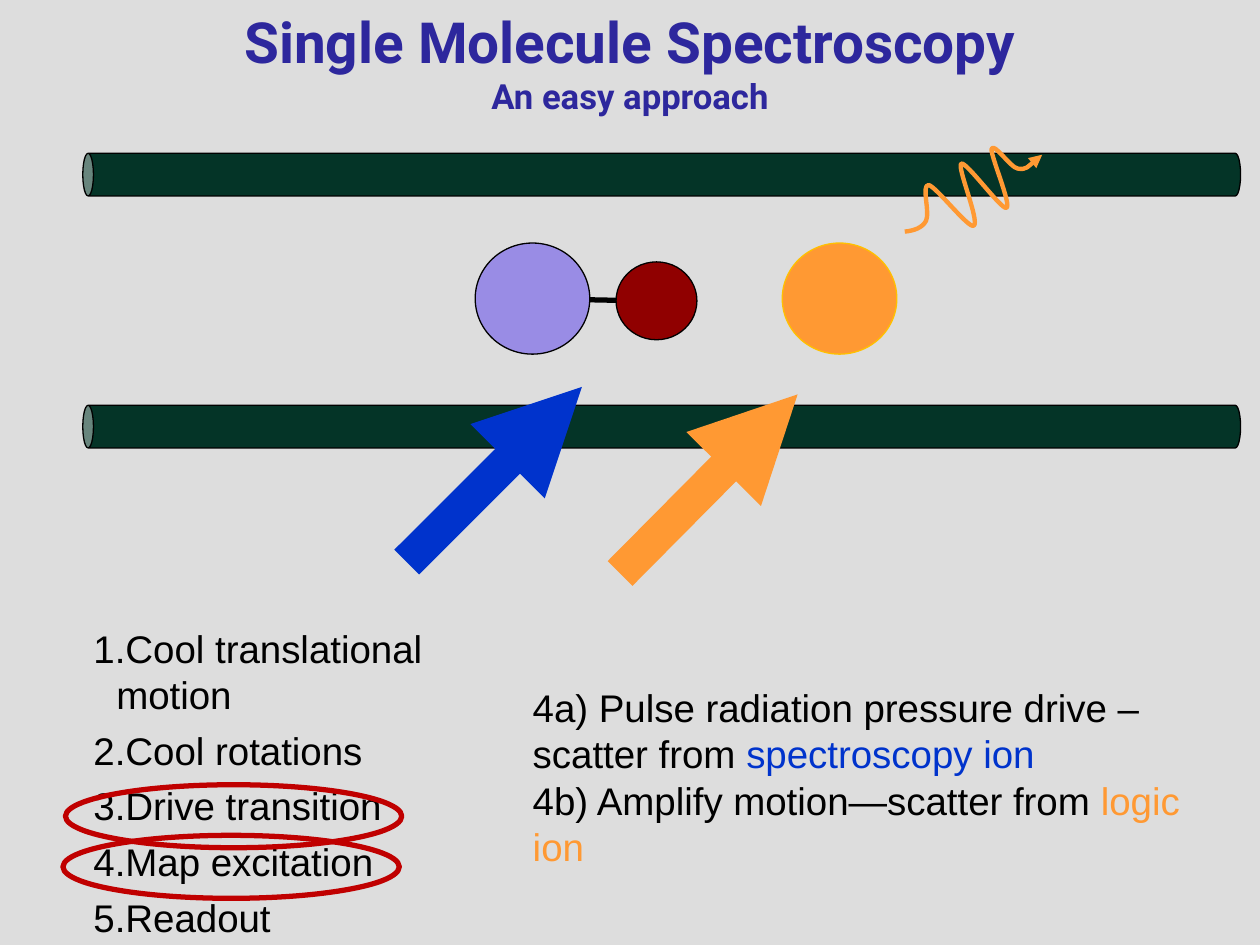
"""Build the single molecule spectroscopy slide."""
from lxml import etree
from pptx import Presentation
from pptx.dml.color import RGBColor
from pptx.enum.shapes import MSO_CONNECTOR, MSO_SHAPE
from pptx.enum.text import MSO_ANCHOR, MSO_AUTO_SIZE, PP_ALIGN
from pptx.oxml.ns import qn
from pptx.util import Cm, Pt

CAN, ELLIPSE = MSO_SHAPE.CAN, MSO_SHAPE.OVAL
STRAIGHT = MSO_CONNECTOR.STRAIGHT
TOP, MIDDLE = MSO_ANCHOR.TOP, MSO_ANCHOR.MIDDLE
NO_RESIZE = MSO_AUTO_SIZE.NONE
CENTER, LEFT = PP_ALIGN.CENTER, PP_ALIGN.LEFT

COLOURS = {
    "background": "DDDDDD", "title": "2D279D", "black": "000000",
    "rod": "043427", "orange": "FF9933", "gold": "FFC000",
    "crimson": "900000", "lilac": "998CE5", "blue": "0033CC", "ring": "C00000",
}

TITLE = [("Single Molecule Spectroscopy", 32.4), ("An easy approach", 19.8)]
STEPS = ["Cool translational motion", "Cool rotations", "Drive transition",
         "Map excitation", "Readout"]
NOTES = [
    [("4a) Pulse radiation pressure drive –scatter from ", "black"),
     ("spectroscopy ion", "blue")],
    [("4b) Amplify motion—scatter from ", "black"), ("logic ion", "orange")],
]
ROD_CENTRE_X, ROD_THICKNESS, ROD_LENGTH = 13.34, 0.86, 23.34
ROD_CENTRES_Y = [3.52, 8.6]
BOND = ((10.74, 6.02), (13.23, 6.07))
ATOMS = [
    ((15.77, 4.9, 2.31, 2.24), "orange", "gold"),
    ((12.42, 5.28, 1.63, 1.57), "crimson", "black"),
    ((9.58, 4.9, 2.31, 2.24), "lilac", "black"),
]
BEAMS = [((12.5, 11.56), (16.08, 7.95), "orange"),
         ((8.2, 11.33), (11.73, 7.8), "blue")]
RINGS = [(1.32, 15.82, 6.78, 1.27), (1.27, 16.84, 6.78, 1.27)]
PHOTON_START = (1824, 467)
PHOTON_CURVE = [
    (1842, 465), (1859, 460), (1867, 445), (1875, 427), (1857, 373), (1872, 373),
    (1887, 376), (1953, 462), (1963, 455), (1976, 447), (1928, 335), (1938, 330),
    (1948, 325), (2019, 424), (2029, 419), (2040, 414), (1996, 312), (1999, 300),
    (2004, 287), (2037, 338), (2052, 340), (2070, 343), (2101, 312), (2101, 312),
]


def colour(name):
    return RGBColor.from_string(COLOURS[name])


def place(shape, box):
    shape.left, shape.top, shape.width, shape.height = map(Cm, box)


def style_line(shape, line_colour, width):
    shape.line.color.rgb = colour(line_colour)
    shape.line.width = Pt(width)


def add_arrowhead(shape):
    etree.SubElement(shape.line._get_or_add_ln(), qn("a:tailEnd"), type="triangle")


def add_shape(slide, kind, box, fill, line_colour, width=0.75):
    shape = slide.shapes.add_shape(kind, *map(Cm, box))
    shape.shadow.inherit = False
    if fill:
        shape.fill.solid()
        shape.fill.fore_color.rgb = colour(fill)
    else:
        shape.fill.background()
    style_line(shape, line_colour, width)
    return shape


def add_line(slide, start, end, line_colour, width):
    connector = slide.shapes.add_connector(STRAIGHT, *map(Cm, start + end))
    etree.SubElement(connector._element.spPr, qn("a:effectLst"))
    style_line(connector, line_colour, width)
    return connector


def add_photon(slide):
    builder = slide.shapes.build_freeform(*PHOTON_START, scale=Cm(0.01))
    builder.add_line_segments(PHOTON_CURVE, close=False)
    shape = builder.convert_to_shape()
    segments = list(shape._element.iter(qn("a:lnTo")))
    for first in range(0, len(segments), 3):
        curve = etree.SubElement(segments[first].getparent(), qn("a:cubicBezTo"))
        for segment in segments[first:first + 3]:
            curve.append(segment[0])
            segment.getparent().remove(segment)
    shape.shadow.inherit = False
    shape.fill.background()
    style_line(shape, "orange", 2.5)
    add_arrowhead(shape)


def fill_title(title):
    place(title, (1.27, 0.56, 22.86, 1.35))
    frame = title.text_frame
    frame.auto_size, frame.vertical_anchor = NO_RESIZE, MIDDLE
    paragraph = frame.paragraphs[0]
    paragraph.alignment = CENTER
    paragraph.font.name, paragraph.font.bold = "Roboto", True
    paragraph.font.color.rgb = colour("title")
    for index, (text, size) in enumerate(TITLE):
        if index:
            paragraph.add_line_break()
        run = paragraph.add_run()
        run.text, run.font.size = text, Pt(size)


def fill_steps(body):
    place(body, (1.63, 12.47, 9.2, 5.64))
    frame = body.text_frame
    frame.auto_size, frame.vertical_anchor = NO_RESIZE, TOP
    frame.text = "\n".join(STEPS)
    for paragraph in frame.paragraphs:
        properties = paragraph._p.get_or_add_pPr()
        properties.set("marL", str(Cm(0.46)))
        properties.set("indent", str(-Cm(0.46)))
        etree.SubElement(properties, qn("a:buAutoNum"), type="arabicPeriod")
        paragraph.alignment = LEFT
        paragraph.space_before, paragraph.space_after = Pt(0), Pt(5.4)
        paragraph.font.name, paragraph.font.size = "Arial", Pt(22)
        paragraph.font.color.rgb = colour("black")


def add_notes(slide):
    frame = slide.shapes.add_textbox(*map(Cm, (10.49, 13.67, 14.27, 3.05))).text_frame
    frame.word_wrap = True
    for index, runs in enumerate(NOTES):
        paragraph = frame.add_paragraph() if index else frame.paragraphs[0]
        paragraph.font.name, paragraph.font.size = "Arial", Pt(22)
        for text, text_colour in runs:
            run = paragraph.add_run()
            run.text = text
            run.font.color.rgb = colour(text_colour)


def main():
    presentation = Presentation()
    presentation.slide_width, presentation.slide_height = Cm(25.4), Cm(19.05)
    slide = presentation.slides.add_slide(presentation.slide_layouts[1])
    slide.background.fill.solid()
    slide.background.fill.fore_color.rgb = colour("background")
    fill_title(slide.shapes.title)
    fill_steps(slide.placeholders[1])
    for centre_y in ROD_CENTRES_Y:
        box = (ROD_CENTRE_X - ROD_THICKNESS / 2, centre_y - ROD_LENGTH / 2,
               ROD_THICKNESS, ROD_LENGTH)
        add_shape(slide, CAN, box, "rod", "black").rotation = 270
    add_line(slide, *BOND, "black", 3)
    for box, fill, line_colour in ATOMS:
        add_shape(slide, ELLIPSE, box, fill, line_colour)
    for start, end, beam_colour in BEAMS:
        add_arrowhead(add_line(slide, start, end, beam_colour, 20))
    add_notes(slide)
    add_photon(slide)
    for box in RINGS:
        add_shape(slide, ELLIPSE, box, None, "ring", 3)
    presentation.save("out.pptx")


if __name__ == "__main__":
    main()
